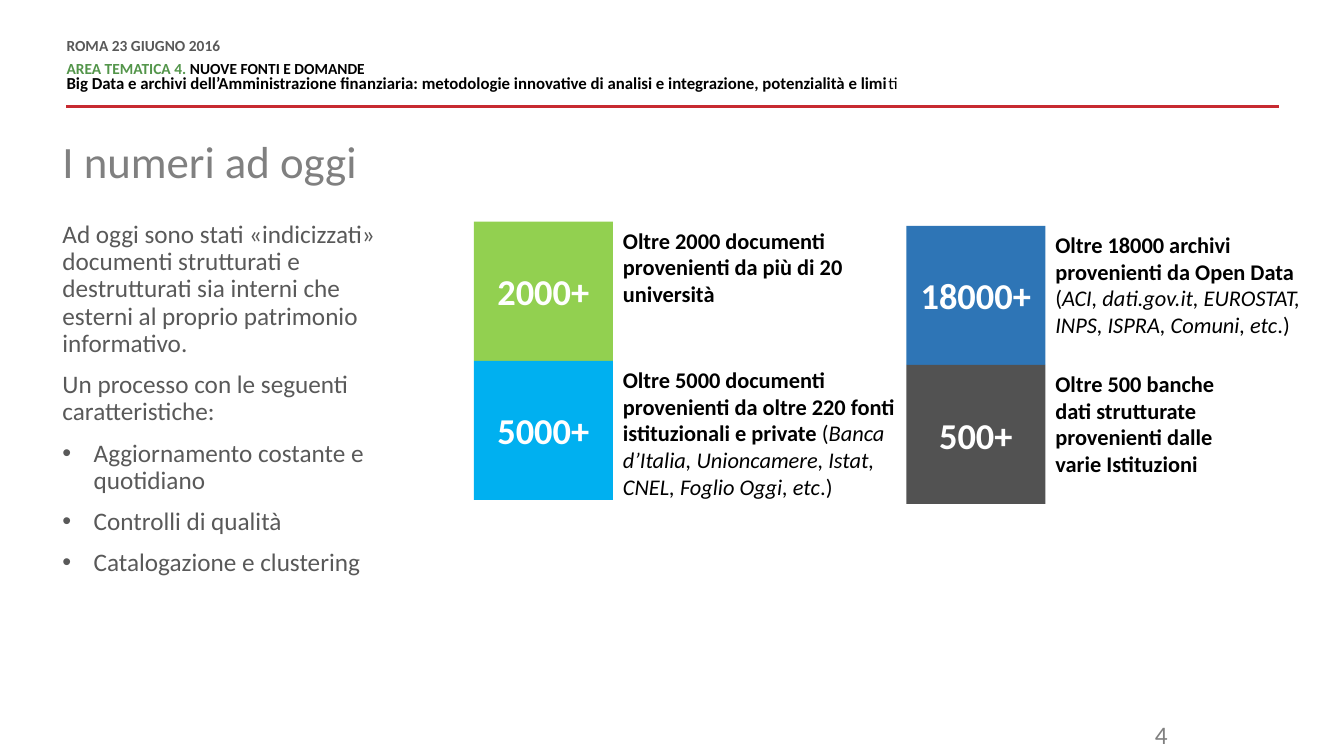
from pptx import Presentation
from pptx.dml.color import RGBColor
from pptx.enum.shapes import MSO_CONNECTOR, MSO_SHAPE
from pptx.enum.text import MSO_ANCHOR, PP_ALIGN
from pptx.oxml.ns import qn
from pptx.util import Inches, Pt
from lxml.etree import SubElement

BOLD = {"bold": True}
PLAIN = {}
ITALIC = {"italic": True}


def rgb(value):
    return RGBColor.from_string(value)


class Deck:
    """Style and current slide; lengths are columns and rows of a 100 x 100 grid."""

    font = "Calibri"

    def __init__(self):
        self.prs = Presentation()
        self.prs.slide_width = Inches(13.33)
        self.prs.slide_height = Inches(7.5)
        self.s = self.prs.slides.add_slide(self.prs.slide_layouts[6])

    def x(self, columns):
        return round(self.prs.slide_width * columns / 100)

    def y(self, rows):
        return round(self.prs.slide_height * rows / 100)

    def box(self, left, top, width, height):
        return self.x(left), self.y(top), self.x(width), self.y(height)

    def set_runs(self, p, runs, size, color):
        """Fill a paragraph with (text, style) runs; a style may override size and color."""
        p.text = runs[0][0]
        for text, _ in runs[1:]:
            p.add_run().text = text
        for r, (_, style) in zip(p.runs, runs):
            r.font.name = self.font
            r.font.size = Pt(style.get("size", size))
            r.font.color.rgb = rgb(style.get("color", color))
            r.font.bold = style.get("bold", False)
            r.font.italic = style.get("italic", False)

    def text(self, place, paragraphs, size, color, inset=True, spacing=None,
             before=0, align=PP_ALIGN.LEFT):
        tf = self.s.shapes.add_textbox(*self.box(*place)).text_frame
        tf.word_wrap = True
        if not inset:
            tf.margin_left = tf.margin_top = tf.margin_right = tf.margin_bottom = 0
        for i, runs in enumerate(paragraphs):
            p = tf.add_paragraph() if i else tf.paragraphs[0]
            self.set_runs(p, runs, size, color)
            p.alignment = align
            if spacing:
                p.line_spacing = spacing
            if i and before:
                p.space_before = Pt(before)
        return tf

    def bullet(self, p, indent):
        pPr = p._p.get_or_add_pPr()
        pPr.set("marL", str(Inches(indent)))
        pPr.set("indent", str(-Inches(indent)))
        SubElement(pPr, qn("a:buFont")).set("typeface", "Arial")
        SubElement(pPr, qn("a:buChar")).set("char", "•")

    def tile(self, place, label, fill):
        sp = self.s.shapes.add_shape(MSO_SHAPE.RECTANGLE, *self.box(*place))
        sp.shadow.inherit = False
        sp.fill.solid()
        sp.fill.fore_color.rgb = rgb(fill)
        sp.line.fill.background()
        tf = sp.text_frame
        tf.word_wrap = True
        tf.vertical_anchor = MSO_ANCHOR.MIDDLE
        p = tf.paragraphs[0]
        self.set_runs(p, [(label, BOLD)], 26, "FFFFFF")
        p.alignment = PP_ALIGN.CENTER

    def rule(self, left, right, row, color, width):
        line = self.s.shapes.add_connector(
            MSO_CONNECTOR.STRAIGHT, self.x(left), self.y(row), self.x(right), self.y(row))
        line.line.color.rgb = rgb(color)
        line.line.width = Pt(width)
        SubElement(line._element.spPr, qn("a:effectLst"))


def main():
    deck = Deck()

    # Header and rule
    deck.rule(4.95, 95.2, 14.13, "C72A31", 2)
    header = deck.text((4.95, 5.2, 62.57, 9.87), [
        [("ROMA 23 GIUGNO 2016", {"bold": True, "color": "595959"})],
        [("AREA TEMATICA 4. ", {"bold": True, "color": "53954A"}),
         ("NUOVE FONTI E DOMANDE", BOLD)],
        [("Big Data e archivi dell’Amministrazione finanziaria: metodologie innovative "
          "di analisi e integrazione, potenzialità e limi", {"bold": True, "size": 12}),
         ("ti", {"size": 12})],
    ], 11, "000000", inset=False, spacing=Pt(10.8))
    header.paragraphs[0].space_after = Pt(6)

    # Title
    deck.text((4.65, 18.53, 87.77, 10.8), [[("I numeri ad oggi", PLAIN)]],
              32, "808080", inset=False, spacing=0.9)

    # Description with bullets
    description = [
        "Ad oggi sono stati «indicizzati» documenti strutturati e destrutturati sia "
        "interni che esterni al proprio patrimonio informativo.",
        "Un processo con le seguenti caratteristiche:",
        "Aggiornamento costante e quotidiano",
        "Controlli di qualità",
        "Catalogazione e clustering",
    ]
    tf = deck.text((4.65, 29.33, 26.33, 50.13), [[(t, PLAIN)] for t in description],
                   18, "595959", inset=False, spacing=0.9, before=10)
    for p in tf.paragraphs[2:]:
        deck.bullet(p, 0.31)

    # Figures: two stacks of square tiles, each tile with its caption
    tile_w, tile_h = 10.35, 18.4
    stacks = [
        (35.26, 29.33, [
            ("2000+", "92D050", 20.11, [
                ("Oltre 2000 documenti provenienti da più di 20 università", BOLD)]),
            ("5000+", "00B0F0", 23.03, [
                ("Oltre 5000 documenti provenienti da oltre 220 fonti istituzionali "
                 "e private ", BOLD), ("(", PLAIN),
                ("Banca d’Italia, Unioncamere, Istat, CNEL, Foglio Oggi, etc", ITALIC),
                (".)", PLAIN)]),
        ]),
        (67.44, 29.87, [
            ("18000+", "2E75B6", 21.23, [
                ("Oltre 18000 archivi provenienti da Open Data ", BOLD), ("(", PLAIN),
                ("ACI, dati.gov.it, EUROSTAT, INPS, ISPRA, Comuni, etc", ITALIC),
                (".)", PLAIN)]),
            ("500+", "525252", 14.1, [
                ("Oltre 500 banche dati strutturate provenienti dalle varie Istituzioni",
                 BOLD)]),
        ]),
    ]
    for left, top, figures in stacks:
        for i, (label, fill, caption_w, caption) in enumerate(figures):
            row = top + i * tile_h
            deck.tile((left, row, tile_w, tile_h), label, fill)
            deck.text((left + tile_w, row, caption_w, tile_h), [caption], 16, "000000")

    # Page number
    deck.text((78.77, 94.53, 8.85, 4.67), [[("4", PLAIN)]], 18, "7F7F7F",
              align=PP_ALIGN.RIGHT)

    deck.prs.save("out.pptx")


if __name__ == "__main__":
    main()
